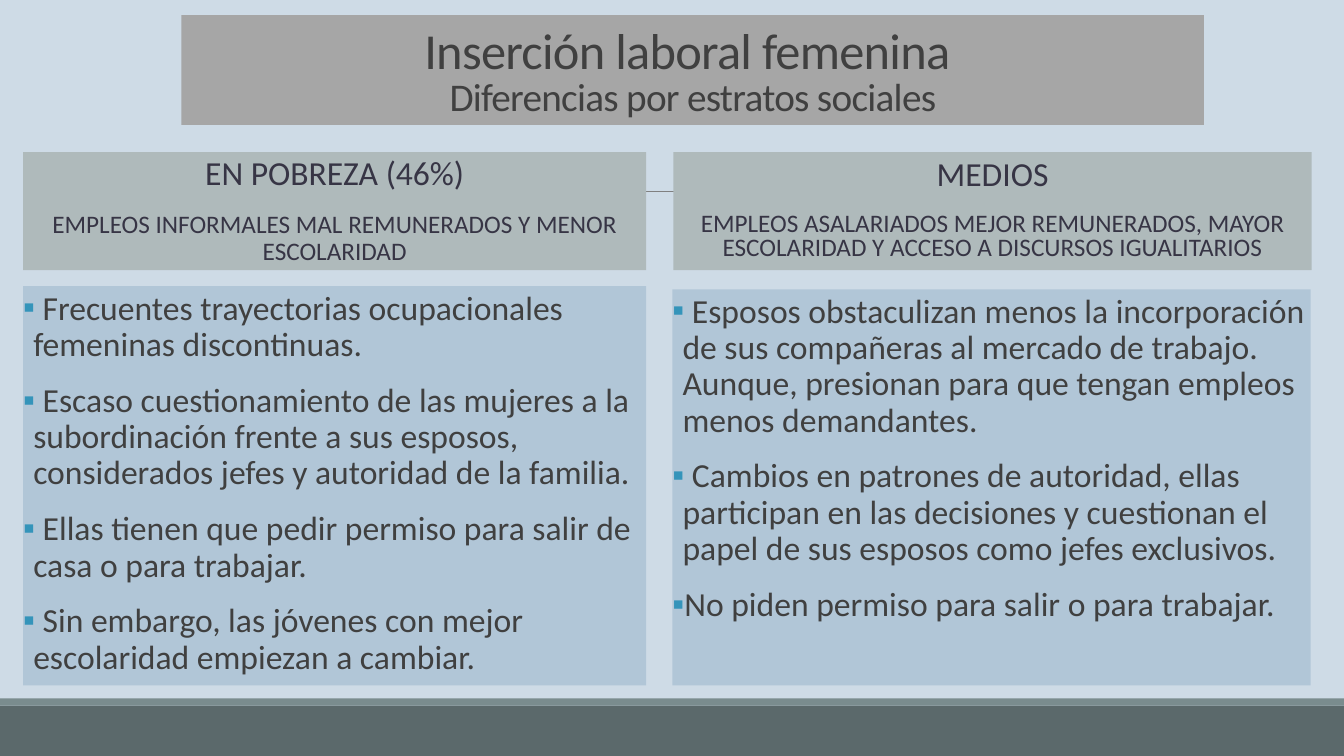
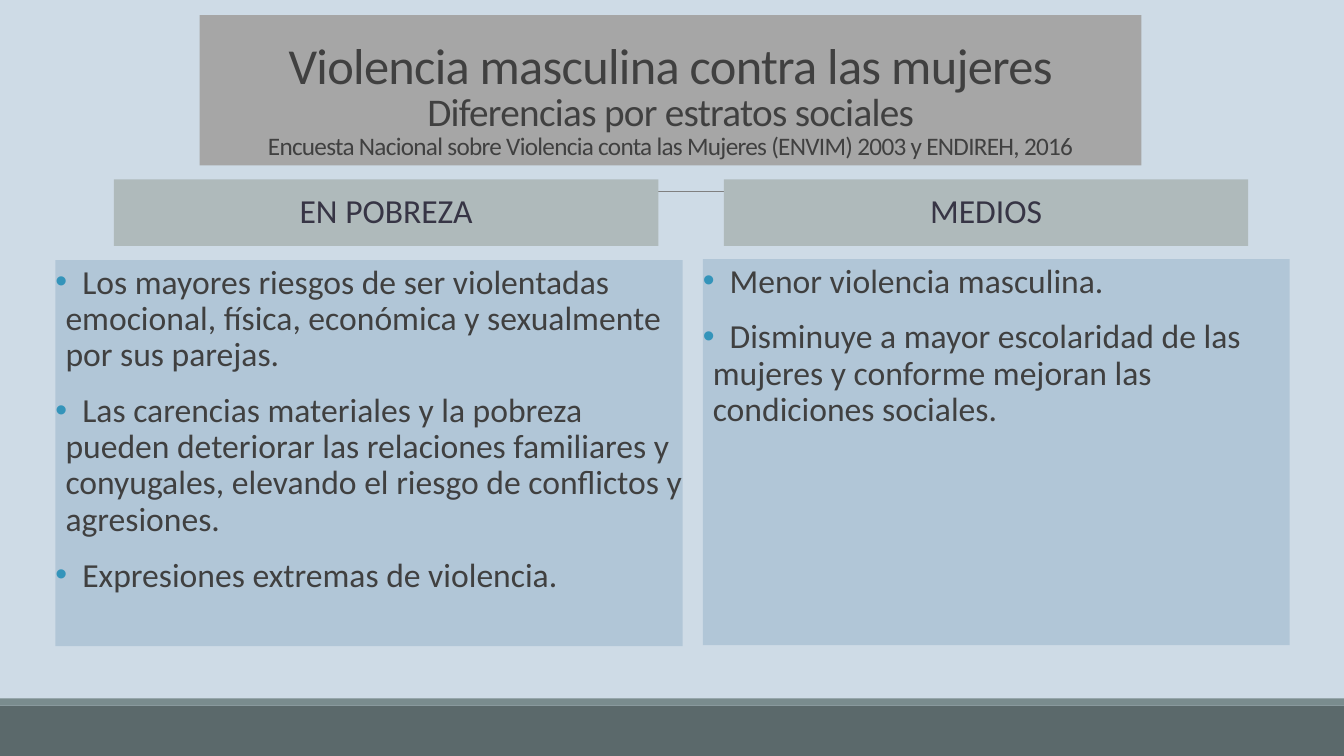
from dataclasses import dataclass

from lxml import etree
from pptx import Presentation
from pptx.dml.color import RGBColor
from pptx.enum.shapes import MSO_CONNECTOR, MSO_SHAPE
from pptx.enum.text import MSO_ANCHOR, MSO_AUTO_SIZE, PP_ALIGN
from pptx.oxml.ns import qn
from pptx.util import Inches, Pt

RECT, STRAIGHT = MSO_SHAPE.RECTANGLE, MSO_CONNECTOR.STRAIGHT
TOP, MIDDLE, BOTTOM = MSO_ANCHOR.TOP, MSO_ANCHOR.MIDDLE, MSO_ANCHOR.BOTTOM
CENTER, LEFT = PP_ALIGN.CENTER, PP_ALIGN.LEFT
NO_AUTOFIT = MSO_AUTO_SIZE.NONE


@dataclass(frozen=True)
class Theme:
    font: str = "Calibri"
    bullet_font: str = "Arial"
    background: str = "CEDBE6"
    footer: str = "5B696B"
    footer_edge: str = "7A8C8E"
    rule: str = "808080"
    title_fill: str = "A6A6A6"
    header_fill: str = "AFBABB"
    body_fill: str = "B1C6D7"
    text: str = "404040"
    header_text: str = "373545"
    bullet: str = "3494BA"
    title_size: float = 36
    subtitle_size: float = 28
    body_size: float = 24
    small_size: float = 18
    title_tracking: float = -0.5
    title_spacing: float = 0.85
    line_spacing: float = 0.9
    before: float = 12
    after: float = 2
    indent: float = 0.1
    inset: float = 0.05


T = Theme()
WIDTH, HEIGHT = 13.33, 7.5
FOOTER_TOP, EDGE_HEIGHT = 7, 0.07
RULE_LEFT, RULE_RIGHT, RULE_TOP = 1.31, 12.21, 1.9

# Boxes are (left, top, width, height) in inches; a leading space in an item
# is the gap after its bullet, widened by gap points.
SLIDES = [
    {
        "title_box": (1.8, 0.15, 10.14, 1.09),
        "title": [("Inserción laboral femenina ", T.title_size),
                  ("Diferencias por estratos sociales", T.subtitle_size)],
        "bullet": "▪",
        "gap": 0,
        "columns": [
            {
                "header_box": (0.23, 1.51, 6.18, 1.17),
                "header": ["EN POBREZA (46%)",
                           "EMPLEOS INFORMALES MAL REMUNERADOS Y MENOR ESCOLARIDAD"],
                "body_box": (0.23, 2.84, 6.18, 3.96),
                "items": [
                    " Frecuentes trayectorias ocupacionales femeninas discontinuas.",
                    " Escaso cuestionamiento de las mujeres a la subordinación frente "
                    "a sus esposos, considerados jefes y autoridad de la familia.",
                    " Ellas tienen que pedir permiso para salir de casa o para trabajar.",
                    " Sin embargo, las jóvenes con mejor escolaridad empiezan a cambiar.",
                ],
            },
            {
                "header_box": (6.68, 1.51, 6.33, 1.17),
                "header": ["MEDIOS",
                           "EMPLEOS ASALARIADOS MEJOR REMUNERADOS, MAYOR ESCOLARIDAD "
                           "Y ACCESO A DISCURSOS IGUALITARIOS"],
                "header_spacing": 0.8,
                "body_box": (6.67, 2.87, 6.33, 3.93),
                "items": [
                    " Esposos obstaculizan menos la incorporación de sus compañeras al "
                    "mercado de trabajo. Aunque, presionan para que tengan empleos "
                    "menos demandantes.",
                    " Cambios en patrones de autoridad, ellas participan en las "
                    "decisiones y cuestionan el papel de sus esposos como jefes "
                    "exclusivos.",
                    "No piden permiso para salir o para trabajar.",
                ],
            },
        ],
    },
    {
        "title_box": (1.98, 0.15, 9.34, 1.49),
        "title": [("Violencia masculina contra las mujeres", T.title_size),
                  ("Diferencias por estratos sociales", T.subtitle_size),
                  ("Encuesta Nacional sobre Violencia conta las Mujeres (ENVIM) "
                   "2003 y ENDIREH, 2016", T.small_size)],
        "bullet": "•",
        "gap": 5.4,
        "columns": [
            {
                "header_box": (1.13, 1.78, 5.4, 0.66),
                "header": ["EN POBREZA"],
                "body_box": (0.55, 2.58, 6.22, 3.83),
                "items": [
                    " Los mayores riesgos de ser violentadas emocional, física, "
                    "económica y sexualmente por sus parejas.",
                    " Las carencias materiales y la pobreza pueden deteriorar las "
                    "relaciones familiares y conyugales, elevando el riesgo de "
                    "conflictos y agresiones.",
                    " Expresiones extremas de violencia.",
                ],
            },
            {
                "header_box": (7.18, 1.78, 5.2, 0.66),
                "header": ["MEDIOS"],
                "body_box": (6.97, 2.57, 5.82, 3.83),
                "items": [
                    " Menor violencia masculina.",
                    " Disminuye a mayor escolaridad de las mujeres y conforme mejoran "
                    "las condiciones sociales.",
                ],
            },
        ],
    },
]


def rgb(color):
    return RGBColor.from_string(color)


def inches(box):
    return [Inches(v) for v in box]


def paint(sp, color):
    sp.fill.solid()
    sp.fill.fore_color.rgb = rgb(color)


def set_frame(sp, anchor, side=0.1):
    tf = sp.text_frame
    tf.word_wrap = True
    tf.auto_size = NO_AUTOFIT
    tf.vertical_anchor = anchor
    tf.margin_left = tf.margin_right = Inches(side)
    tf.margin_top = tf.margin_bottom = Inches(T.inset)
    return tf


def add_run(p, text, size, color, tracking=0):
    r = p.add_run()
    r.text = text
    r.font.name = T.font
    r.font.size = Pt(size)
    r.font.color.rgb = rgb(color)
    if tracking:
        r.font._element.set("spc", str(round(tracking * 100)))


def add_paragraphs(tf, texts, align, spacing):
    """Yield one spaced paragraph for each text, with the text."""
    for i, text in enumerate(texts):
        p = tf.add_paragraph() if i else tf.paragraphs[0]
        p.alignment = align
        p.line_spacing = spacing
        p.space_before, p.space_after = Pt(T.before), Pt(T.after)
        yield p, text


def set_bullet(p, char):
    pPr = p._p.get_or_add_pPr()
    pPr.set("marL", str(Inches(T.indent)))
    pPr.set("indent", str(-Inches(T.indent)))
    color = etree.SubElement(pPr, qn("a:buClr"))
    etree.SubElement(color, qn("a:srgbClr"), val=T.bullet)
    etree.SubElement(pPr, qn("a:buFont"), typeface=T.bullet_font)
    etree.SubElement(pPr, qn("a:buChar"), char=char)


def add_text_panel(s, box, color, anchor, side=0.1):
    sp = s.shapes.add_textbox(*inches(box))
    paint(sp, color)
    return set_frame(sp, anchor, side)


def add_title(s, box, lines):
    sp = s.shapes.title
    sp.left, sp.top, sp.width, sp.height = inches(box)
    paint(sp, T.title_fill)
    p = set_frame(sp, BOTTOM).paragraphs[0]
    p.alignment = CENTER
    p.line_spacing = T.title_spacing
    p.space_before = Pt(0)
    for i, (text, size) in enumerate(lines):
        if i:
            p.add_line_break()
        add_run(p, text, size, T.text, T.title_tracking)


def add_column(s, column, bullet, gap):
    tf = add_text_panel(s, column["header_box"], T.header_fill, MIDDLE)
    spacing = column.get("header_spacing", T.line_spacing)
    sizes = iter((T.body_size, T.small_size))
    for p, text in add_paragraphs(tf, column["header"], CENTER, spacing):
        add_run(p, text, next(sizes), T.header_text)

    tf = add_text_panel(s, column["body_box"], T.body_fill, TOP, side=0)
    for p, text in add_paragraphs(tf, column["items"], LEFT, T.line_spacing):
        set_bullet(p, bullet)
        if text.startswith(" "):
            add_run(p, " ", T.body_size, T.text, gap)
        add_run(p, text.lstrip(), T.body_size, T.text)


def decorate_layout(layout, s):
    """Draw the footer bands and rule on a slide, then move them to its layout."""
    bands = [((0, FOOTER_TOP, WIDTH, HEIGHT - FOOTER_TOP), T.footer),
             ((0, FOOTER_TOP - EDGE_HEIGHT, WIDTH, EDGE_HEIGHT), T.footer_edge)]
    parts = []
    for box, color in bands:
        sp = s.shapes.add_shape(RECT, *inches(box))
        sp.shadow.inherit = False
        paint(sp, color)
        sp.line.fill.background()
        parts.append(sp)
    rule = s.shapes.add_connector(
        STRAIGHT, *inches((RULE_LEFT, RULE_TOP, RULE_RIGHT, RULE_TOP)))
    rule.line.color.rgb = rgb(T.rule)
    rule.line.width = Pt(0.5)
    etree.SubElement(rule._element.spPr, qn("a:effectLst"))
    parts.append(rule)
    for number, part in enumerate(parts, start=101):
        part._element.xpath(".//p:cNvPr")[0].set("id", str(number))
        layout.shapes._spTree.append(part._element)


def main():
    prs = Presentation()
    prs.slide_width, prs.slide_height = Inches(WIDTH), Inches(HEIGHT)
    fill = prs.slide_master.background.fill
    fill.solid()
    fill.fore_color.rgb = rgb(T.background)
    layout = prs.slide_layouts.get_by_name("Title Only")
    for i, content in enumerate(SLIDES):
        s = prs.slides.add_slide(layout)
        if i == 0:
            decorate_layout(layout, s)
        add_title(s, content["title_box"], content["title"])
        for column in content["columns"]:
            add_column(s, column, content["bullet"], content["gap"])
    prs.save("out.pptx")


if __name__ == "__main__":
    main()
